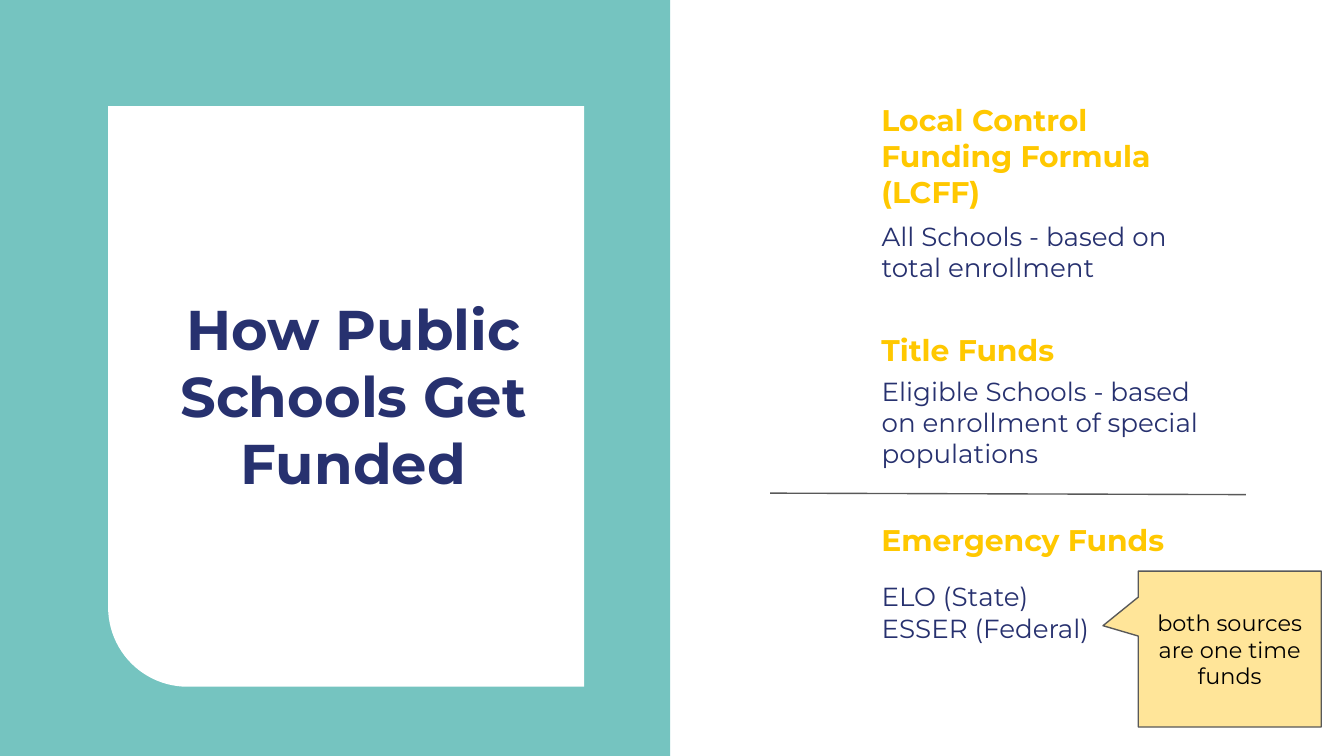
import pptx
import pptx.dml.color
import pptx.enum.shapes
import pptx.enum.text
import pptx.oxml.ns
import pptx.util
from lxml import etree

TEAL = "75C4C0"
WHITE = "FFFFFF"
NAVY = "27316F"
YELLOW = "FFC800"
CREAM = "FFE599"
GRAY = "595959"
BLACK = "000000"
FONT = "Montserrat"
PADDING = 7.2

SECTIONS = [
    ("Local Control Funding Formula (LCFF)", ["All Schools - based on total enrollment"], 47.5, 110.9),
    ("Title Funds", ["Eligible Schools - based on enrollment of special populations"], 170.6, 193.7),
    ("Emergency Funds", ["ELO (State)", "ESSER (Federal)"], 272.2, 303.8),
]


def rgb(color):
    """Turn a hex string into a colour."""
    return pptx.dml.color.RGBColor.from_string(color)


def place(shape, box):
    """Move and size a shape to a (left, top, width, height) box in points."""
    shape.left, shape.top, shape.width, shape.height = (pptx.util.Pt(length) for length in box)


def write(shape, lines, size, color, bold=False, centered=False):
    """Put lines of formatted text without bullets into a shape."""
    frame = shape.text_frame
    frame.text = "\n".join(lines)
    frame.word_wrap = True
    frame.auto_size = pptx.enum.text.MSO_AUTO_SIZE.NONE
    anchors = pptx.enum.text.MSO_ANCHOR
    frame.vertical_anchor = anchors.MIDDLE if centered else anchors.TOP
    frame.margin_left = frame.margin_right = pptx.util.Pt(PADDING)
    frame.margin_top = frame.margin_bottom = pptx.util.Pt(PADDING)
    alignments = pptx.enum.text.PP_ALIGN
    for paragraph in frame.paragraphs:
        paragraph.alignment = alignments.CENTER if centered else alignments.LEFT
        paragraph.space_before = paragraph.space_after = pptx.util.Pt(0)
        properties = paragraph._p.get_or_add_pPr()
        properties.set("marL", "0")
        properties.set("indent", "0")
        etree.SubElement(properties, pptx.oxml.ns.qn("a:buNone"))
        for run in paragraph.runs:
            run.font.name = FONT
            run.font.size = pptx.util.Pt(size)
            run.font.bold = bold
            run.font.color.rgb = rgb(color)


def add_filled_shape(slide, kind, box, fill, line=None):
    """Add a flat preset shape, outlined only when a line colour is given."""
    shape = slide.shapes.add_shape(kind, *(pptx.util.Pt(length) for length in box))
    shape.shadow.inherit = False
    shape.fill.solid()
    shape.fill.fore_color.rgb = rgb(fill)
    if line:
        shape.line.color.rgb = rgb(line)
        shape.line.width = pptx.util.Pt(0.75)
    else:
        shape.line.fill.background()
    return shape


def add_title_panel(slide, box):
    """Fill the box with teal and set the title on a white card inside it."""
    left, top, width, height = box
    shapes = pptx.enum.shapes.MSO_SHAPE
    card_box = (left + 57.9, top + 56.9, 255, 311)
    panel = add_filled_shape(slide, shapes.RECTANGLE, box, TEAL)
    card = add_filled_shape(slide, shapes.ROUND_1_RECTANGLE, card_box, WHITE)
    card.rotation = 180
    card.adjustments[0] = 0.167
    title = slide.shapes.title
    for shape in (panel, card):
        title.element.addprevious(shape.element)
    place(title, (left + 65.5, top + 56.2, 247.7, 311))
    write(title, ["How Public Schools Get Funded"], 30, NAVY, bold=True, centered=True)


def add_funding_sections(slide, box):
    """Stack the funding headings and descriptions in the box."""
    left, top, width, height = box
    bodies = list(slide.placeholders)[1:]
    for (heading, lines, heading_top, body_top), body in zip(SECTIONS, bodies):
        heading_box = slide.shapes.add_textbox(0, 0, 0, 0)
        place(heading_box, (left, top + heading_top, width, 28))
        write(heading_box, [heading], 16, YELLOW, bold=True)
        place(body, (left, top + body_top, width, 64.8))
        write(body, lines, 14, NAVY)
    for body in bodies[len(SECTIONS):]:
        body.element.getparent().remove(body.element)


def add_callout(slide, box):
    """Add the note that points left to the emergency funds."""
    kind = pptx.enum.shapes.MSO_SHAPE.RECTANGULAR_CALLOUT
    callout = add_filled_shape(slide, kind, box, CREAM, GRAY)
    callout.adjustments[0] = -0.693
    callout.adjustments[1] = -0.15
    write(callout, ["both sources are one time funds"], 12, BLACK, centered=True)


def add_divider(slide, box):
    """Draw a thin line from the top left to the bottom right of the box."""
    left, top, width, height = box
    ends = (left, top, left + width, top + height)
    kind = pptx.enum.shapes.MSO_CONNECTOR.STRAIGHT
    divider = slide.shapes.add_connector(kind, *(pptx.util.Pt(length) for length in ends))
    divider.line.color.rgb = rgb(GRAY)
    divider.line.width = pptx.util.Pt(0.75)
    etree.SubElement(divider.element.spPr, pptx.oxml.ns.qn("a:effectLst"))


def main():
    """Build and save the funding slide."""
    presentation = pptx.Presentation()
    presentation.slide_width = pptx.util.Pt(720)
    presentation.slide_height = pptx.util.Pt(405)
    layout = presentation.slide_layouts.get_by_name("Comparison")
    slide = presentation.slides.add_slide(layout)
    add_title_panel(slide, (0, 0, 359, 405))
    add_funding_sections(slide, (465.1, 0, 193, 405))
    add_callout(slide, (609.8, 306, 98, 83.5))
    add_divider(slide, (412.6, 264.2, 254.9, 0.8))
    presentation.save("out.pptx")


if __name__ == "__main__":
    main()
